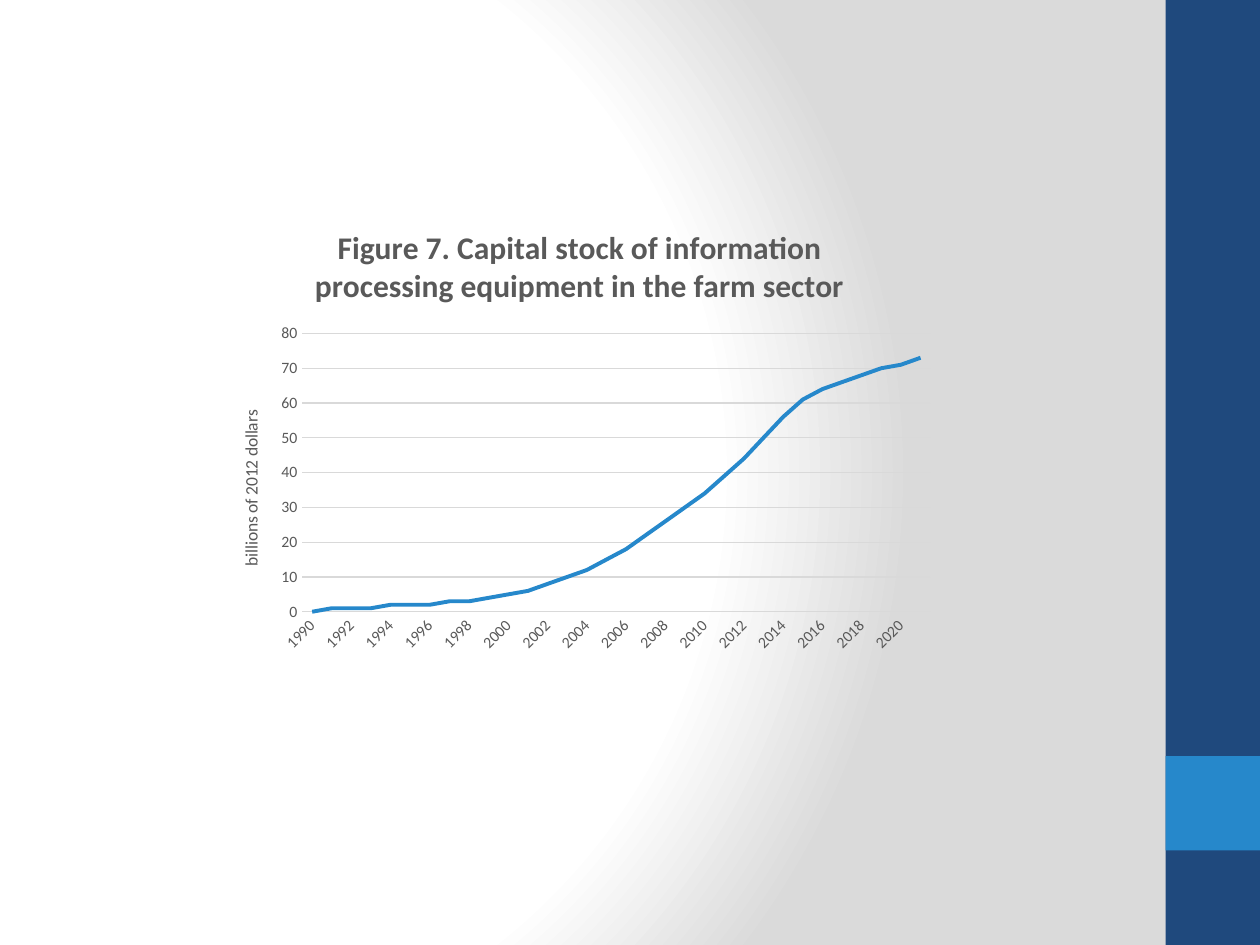
from lxml import etree
from pptx import Presentation
from pptx.chart.data import CategoryChartData
from pptx.dml.color import RGBColor
from pptx.enum.chart import XL_CHART_TYPE as ChartType, XL_TICK_MARK as TickMark
from pptx.enum.shapes import MSO_SHAPE as ShapeKind
from pptx.oxml import parse_xml
from pptx.oxml.ns import qn
from pptx.util import Inches, Pt

NAVY, BLUE, GREY, PALE = "1F497D", "2688CB", "595959", "D9D9D9"
FONT = "Calibri"
TITLE = "Figure 7. Capital stock of information processing equipment in the farm sector"
AXIS_TITLE = "billions of 2012 dollars"
FIRST_YEAR = 1990
STOCK = [0, 1, 1, 1, 2, 2, 2, 3, 3, 4, 5, 6, 8, 10, 12, 15,
         18, 22, 26, 30, 34, 39, 44, 50, 56, 61, 64, 66, 68, 70, 71, 73]
SIDE_BARS = [((9.25, 0, 0.75, 7.5), NAVY), ((9.25, 6, 0.75, 0.75), BLUE)]
CHART_BOX = (1.7, 1.62, 5.8, 3.63)
GRADIENT_STOPS = [(0, "FFFFFF"), (75, "FFFFFF"), (100, "DADADA")]
GRADIENT_CENTRE = {"l": 20, "t": 50, "r": 100, "b": 50}


def color(value):
    return RGBColor.from_string(value)


def style_font(font, size, bold=False):
    font.name = FONT
    font.size = Pt(size)
    font.bold = bold
    font.color.rgb = color(GREY)


def style_line(line, value, width):
    line.color.rgb = color(value)
    line.width = Pt(width)


def add_background(slide):
    stops = "".join(f'<a:gs pos="{place * 1000}"><a:srgbClr val="{value}"/></a:gs>'
                    for place, value in GRADIENT_STOPS)
    centre = " ".join(f'{side}="{share * 1000}"' for side, share in GRADIENT_CENTRE.items())
    background = parse_xml(
        '<p:bg xmlns:p="http://schemas.openxmlformats.org/presentationml/2006/main"'
        ' xmlns:a="http://schemas.openxmlformats.org/drawingml/2006/main"><p:bgPr>'
        f'<a:gradFill rotWithShape="1"><a:gsLst>{stops}</a:gsLst>'
        f'<a:path path="circle"><a:fillToRect {centre}/></a:path></a:gradFill>'
        '<a:effectLst/></p:bgPr></p:bg>')
    slide.element.cSld.insert(0, background)


def add_side_bar(slide, box, fill):
    shape = slide.shapes.add_shape(ShapeKind.RECTANGLE, *map(Inches, box))
    shape.shadow.inherit = False
    shape.fill.solid()
    shape.fill.fore_color.rgb = color(fill)
    shape.line.fill.background()


def set_title(title, text, size, bold=False):
    title.text_frame.text = text
    style_font(title.text_frame.paragraphs[0].font, size, bold)


def add_stock_chart(slide):
    data = CategoryChartData()
    data.categories = [str(FIRST_YEAR + index) for index in range(len(STOCK))]
    data.add_series("Series 1", STOCK)
    chart = slide.shapes.add_chart(ChartType.LINE, *map(Inches, CHART_BOX), data).chart
    style_font(chart.font, 10)
    chart.has_legend = False
    set_title(chart.chart_title, TITLE, 18, True)
    chart.chart_title.include_in_layout = False

    series = chart.plots[0].series[0]
    series.smooth = False
    style_line(series.format.line, BLUE, 2.25)

    years, dollars = chart.category_axis, chart.value_axis
    for axis in (years, dollars):
        axis.major_tick_mark = axis.minor_tick_mark = TickMark.NONE
        style_font(axis.tick_labels.font, 9)
    style_line(years.format.line, PALE, 0.75)
    years._element.txPr.find(qn("a:bodyPr")).set("rot", "-2700000")
    skip = etree.Element(qn("c:tickLblSkip"), val="2")
    years._element.find(qn("c:noMultiLvlLbl")).addprevious(skip)

    dollars.minimum_scale, dollars.maximum_scale, dollars.major_unit = 0, 80, 10
    dollars.tick_labels.number_format = "#,##0"
    dollars.tick_labels.number_format_is_linked = False
    dollars.format.line.fill.background()
    style_line(dollars.major_gridlines.format.line, PALE, 0.75)
    set_title(dollars.axis_title, AXIS_TITLE, 10)


def main():
    presentation = Presentation()
    presentation.slide_width, presentation.slide_height = Inches(10), Inches(7.5)
    slide = presentation.slides.add_slide(presentation.slide_layouts[6])
    add_background(slide)
    for box, fill in SIDE_BARS:
        add_side_bar(slide, box, fill)
    add_stock_chart(slide)
    presentation.save("out.pptx")


if __name__ == "__main__":
    main()
